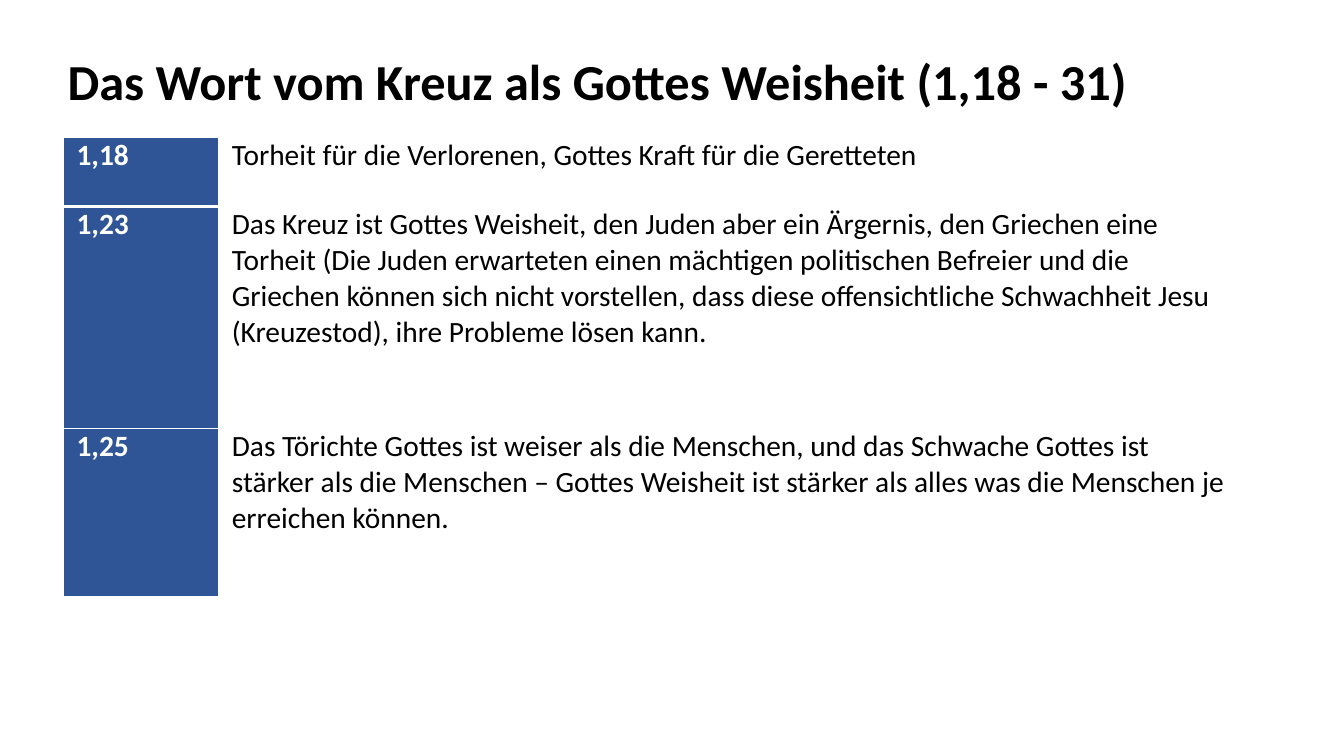
from dataclasses import dataclass

from lxml import etree
from pptx import Presentation
from pptx import util as u
from pptx.dml.color import RGBColor
from pptx.enum import text
from pptx.oxml import ns


@dataclass(frozen=True)
class Theme:
    font: str = "Calibri"
    ink: str = "000000"
    paper: str = "FFFFFF"
    verse_blue: str = "2F5597"
    title_size: int = 36
    table_size: int = 21


TITLE = "Das Wort vom Kreuz als Gottes Weisheit (1,18 - 31)"

# Verse, row height in inches, statement
VERSES = [
    ("1,18", 0.69, "Torheit für die Verlorenen, Gottes Kraft für die Geretteten"),
    ("1,23", 2.2,
     "Das Kreuz ist Gottes Weisheit, den Juden aber ein Ärgernis, den Griechen "
     "eine Torheit (Die Juden erwarteten einen mächtigen politischen Befreier und "
     "die Griechen können sich nicht vorstellen, dass diese offensichtliche "
     "Schwachheit Jesu (Kreuzestod), ihre Probleme lösen kann."),
    ("1,25", 1.67,
     "Das Törichte Gottes ist weiser als die Menschen, und das Schwache Gottes "
     "ist stärker als die Menschen – Gottes Weisheit ist stärker als alles was "
     "die Menschen je erreichen können."),
]


class SlideBuilder:
    def __init__(self, presentation, theme):
        self.theme = theme
        self.slide = presentation.slides.add_slide(presentation.slide_layouts[5])

    def set_text(self, text_frame, content, size, color, bold):
        text_frame.text = content
        paragraph = text_frame.paragraphs[0]
        paragraph.alignment = text.PP_ALIGN.LEFT
        font = paragraph.runs[0].font
        font.name, font.size, font.bold = self.theme.font, u.Pt(size), bold
        font.color.rgb = RGBColor.from_string(color)

    def title(self, content, left, top, width, height):
        shape = self.slide.shapes.title
        shape.left, shape.top = u.Inches(left), u.Inches(top)
        shape.width, shape.height = u.Inches(width), u.Inches(height)
        frame = shape.text_frame
        self.set_text(frame, content, self.theme.title_size, self.theme.ink, True)
        frame.word_wrap = False
        frame.auto_size = text.MSO_AUTO_SIZE.SHAPE_TO_FIT_TEXT
        frame.vertical_anchor = text.MSO_ANCHOR.TOP

    def borders(self, cell, widths):
        properties = cell._tc.get_or_add_tcPr()
        for index, (side, width) in enumerate(widths.items()):
            line = etree.Element(ns.qn(f"a:ln{side}"), w=str(u.Pt(width)))
            fill = etree.SubElement(line, ns.qn("a:solidFill"))
            etree.SubElement(fill, ns.qn("a:srgbClr"), val=self.theme.paper)
            properties.insert(index, line)

    def cell(self, cell, content, fill, color, bold, widths):
        cell.margin_left = cell.margin_right = u.Inches(0.13)
        cell.margin_top = cell.margin_bottom = 0
        cell.vertical_anchor = text.MSO_ANCHOR.TOP
        cell.fill.solid()
        cell.fill.fore_color.rgb = RGBColor.from_string(fill)
        self.set_text(cell.text_frame, content, self.theme.table_size, color, bold)
        self.borders(cell, widths)

    def verse_table(self, verses, left, top, column_widths):
        theme = self.theme
        height = sum(row_height for _, row_height, _ in verses)
        table = self.slide.shapes.add_table(
            len(verses), len(column_widths), u.Inches(left), u.Inches(top),
            u.Inches(sum(column_widths)), u.Inches(height)).table
        for column, width in zip(table.columns, column_widths):
            column.width = u.Inches(width)
        for index, (verse, row_height, statement) in enumerate(verses):
            table.rows[index].height = u.Inches(row_height)
            # The first row is set off by a thicker rule
            widths = {"L": 1, "R": 1, "T": 3 if index == 1 else 1,
                      "B": 3 if index == 0 else 1}
            self.cell(table.cell(index, 0), verse, theme.verse_blue,
                      theme.paper, True, widths)
            self.cell(table.cell(index, 1), statement, theme.paper,
                      theme.ink, False, widths)


def main():
    presentation = Presentation()
    presentation.slide_width = u.Inches(13.33)
    presentation.slide_height = u.Inches(7.5)
    builder = SlideBuilder(presentation, Theme())

    # Heading
    builder.title(TITLE, 0.57, 0.45, 10.84, 0.71)

    # Verses with their statements
    builder.verse_table(VERSES, 0.63, 1.36, (1.54, 10.12))

    presentation.save("out.pptx")


if __name__ == "__main__":
    main()
